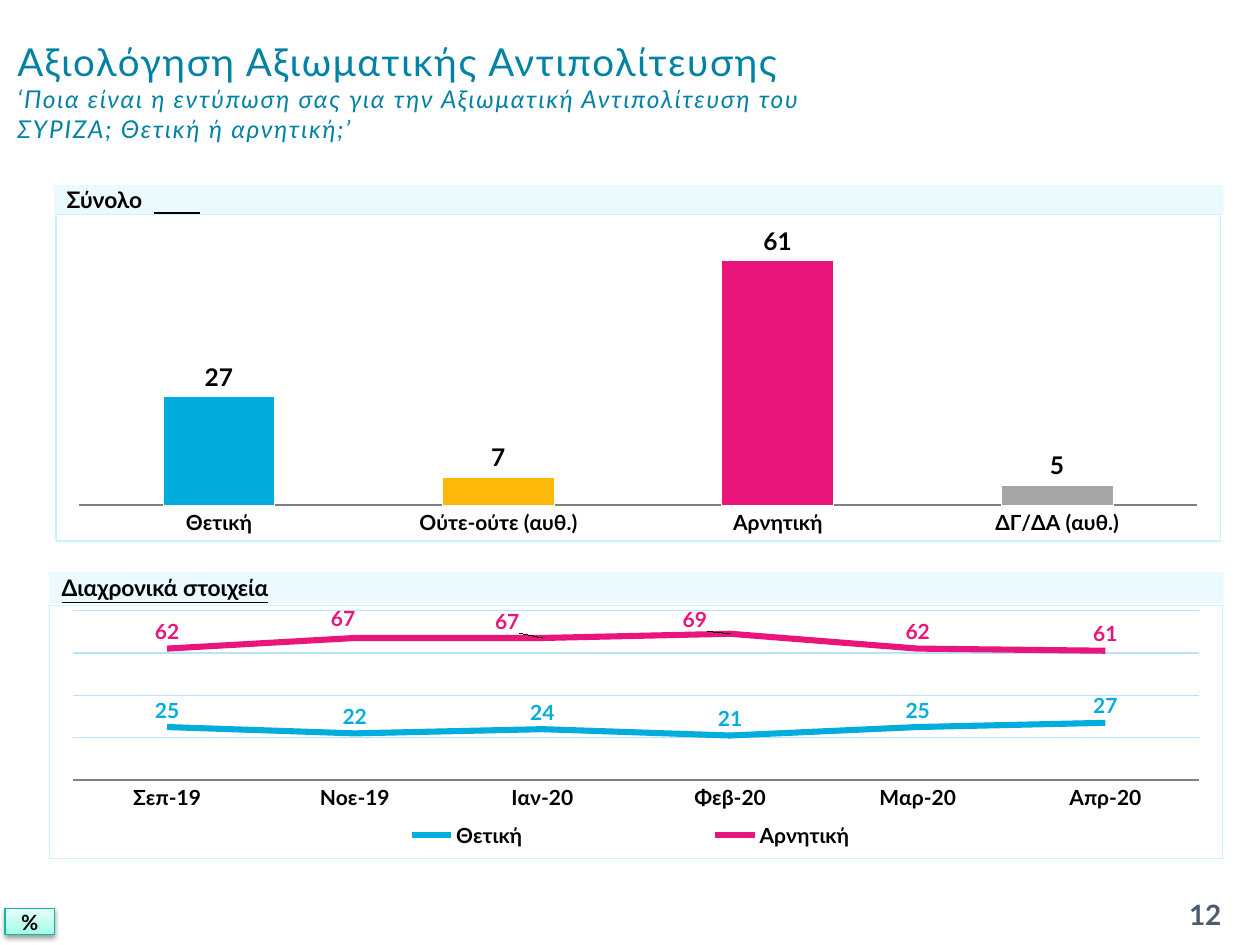
"""Build a slide of opposition ratings with a bar chart and a trend chart."""
from copy import deepcopy

from lxml import etree
from pptx import Presentation, util as u
from pptx.chart.data import CategoryChartData
from pptx.dml.color import RGBColor
from pptx.enum import chart as ch, shapes, text
from pptx.oxml import parse_xml
from pptx.oxml.ns import qn

THEME = {
    "font": "Lato", "title": "0082A5", "ink": "000000", "page": "4E5B6F", "white": "FFFFFF",
    "pale": "C5F3FF", "grid": "B9E2FD", "axis": "808080", "teal": "16B39E",
    "blue": "00ADDC", "amber": "FEB80A", "pink": "EA157A", "grey": "A6A6A6",
    "stops": ("9DFDE8", "BBFCED", "E4FFF9"),
    "sz_title": 22, "sz_page": 16, "sz_sub": 14, "sz_bar": 13, "sz_small": 12,
}
NS = ('xmlns:a="http://schemas.openxmlformats.org/drawingml/2006/main" '
      'xmlns:c="http://schemas.openxmlformats.org/drawingml/2006/chart"')
rgb = {k: RGBColor.from_string(v) for k, v in THEME.items() if isinstance(v, str) and k != "font"}


def style(font, size, color, **fmt):
    font.color.rgb = rgb[color]
    for name, value in {"name": THEME["font"], "size": u.Pt(THEME[size]), **fmt}.items():
        setattr(font, name, value)


def layout(x, y, w=None, h=None, inner=False):
    parts = [("xMode", "edge"), ("yMode", "edge")] if w else []
    parts = ([("layoutTarget", "inner")] if inner else []) + parts + [("x", x), ("y", y)]
    parts += [("w", w), ("h", h)] if w else []
    body = "".join(f'<c:{k} val="{v}"/>' for k, v in parts)
    return parse_xml(f"<c:layout {NS}><c:manualLayout>{body}</c:manualLayout></c:layout>")


prs = Presentation()
prs.slide_width, prs.slide_height = u.Inches(10), u.Inches(7.5)
s = prs.slides.add_slide(prs.slide_layouts[6])

tb = s.shapes.add_textbox(u.Inches(0.04), u.Inches(0.13), u.Inches(6.85), u.Inches(1.18))
tf = tb.text_frame
tf.word_wrap, tf.vertical_anchor = True, text.MSO_ANCHOR.MIDDLE
p = tf.paragraphs[0]
for i, (words, size) in enumerate([
        ("Αξιολόγηση Αξιωματικής Αντιπολίτευσης", "sz_title"),
        ("‘Ποια είναι η εντύπωση σας για την Αξιωματική Αντιπολίτευση του ΣΥΡΙΖΑ; Θετική ή αρνητική;’",
         "sz_sub")]):
    if i:
        p.add_line_break()
    r = p.add_run()
    r.text = words
    style(r.font, size, "title", italic=bool(i))
    r.font._element.set("spc", "100")

boxes = [
    ("Σύνολο", (0.43, 1.47, 9.28, 0.23), "pale", "sz_bar", "ink", True),
    ("Διαχρονικά στοιχεία", (0.39, 4.54, 9.32, 0.25), "pale", "sz_bar", "ink", True),
    ("%", (0.04, 7.21, 0.39, 0.21), "stops", "sz_small", "ink", False),
    ("12", (9.17, 7.06, 0.79, 0.4), None, "sz_page", "page", False),
]
for words, at, fill, size, color, heading in boxes:
    box = [u.Inches(v) for v in at]
    sp = s.shapes.add_shape(shapes.MSO_SHAPE.RECTANGLE, *box) if fill else s.shapes.add_textbox(*box)
    tf = sp.text_frame
    tf.word_wrap, tf.vertical_anchor = True, text.MSO_ANCHOR.MIDDLE
    tf.margin_top = tf.margin_bottom = 0
    p = tf.paragraphs[0]
    p.alignment = text.PP_ALIGN.LEFT if heading else text.PP_ALIGN.CENTER
    r = p.add_run()
    r.text = words
    style(r.font, size, color, bold=True, underline=heading)
    if fill:
        sp.shadow.inherit = False
    if fill == "pale":
        sp.fill.solid()
        sp.fill.fore_color.rgb = rgb["pale"]
        clr = sp._element.spPr.find(".//" + qn("a:srgbClr"))
        etree.SubElement(clr, qn("a:alpha")).set("val", "35000")
        sp.line.fill.background()
    elif fill == "stops":
        sp.fill.gradient()
        sp.fill.gradient_angle = 90
        stops = sp._element.spPr.find(".//" + qn("a:gsLst"))
        stops.insert(1, deepcopy(stops[0]))
        for stop, hue, pos in zip(sp.fill.gradient_stops, THEME["stops"], (0, 0.35, 1)):
            stop.color.rgb, stop.position = RGBColor.from_string(hue), pos
        sp.line.color.rgb, sp.line.width = rgb["teal"], u.Pt(0.75)
        sp._element.spPr.find(qn("a:effectLst")).append(parse_xml(
            f'<a:outerShdw {NS} blurRad="39370" dist="20320" dir="5400000" rotWithShape="0">'
            '<a:srgbClr val="000000"><a:alpha val="38000"/></a:srgbClr></a:outerShdw>'))

rule = s.shapes.add_connector(shapes.MSO_CONNECTOR.STRAIGHT, u.Inches(1.22), u.Inches(1.69),
                              u.Inches(1.59), u.Inches(1.69))
rule.line.color.rgb, rule.line.width = rgb["ink"], u.Pt(0.75)
etree.SubElement(rule._element.spPr, qn("a:effectLst"))

charts = [
    (ch.XL_CHART_TYPE.COLUMN_CLUSTERED, (0.44, 1.7, 9.25, 2.6), 70, (0.02, 0.03, 0.96, 0.86),
     ["Θετική", "Ούτε-ούτε (αυθ.)", "Αρνητική", "ΔΓ/ΔΑ (αυθ.)"],
     [("Σύνολο", [27, 7, 61, 5])]),
    (ch.XL_CHART_TYPE.LINE, (0.39, 4.8, 9.32, 2.02), 80, (0.02, 0.02, 0.96, 0.67),
     ["Σεπ-19", "Νοε-19", "Ιαν-20", "Φεβ-20", "Μαρ-20", "Απρ-20"],
     [("Θετική", [25, 22, 24, 21, 25, 27]), ("Αρνητική", [62, 67, 67, 69, 62, 61])]),
]
for kind, at, top, plot_at, cats, rows in charts:
    data = CategoryChartData(number_format="0")
    data.categories = cats
    for name, vals in rows:
        data.add_series(name, vals)
    chart = s.shapes.add_chart(kind, *[u.Inches(v) for v in at], data).chart
    is_line = kind == ch.XL_CHART_TYPE.LINE
    chart.has_title = False
    style(chart.font, "sz_small", "ink", bold=True)
    chart._chartSpace.chart.addnext(parse_xml(
        f'<c:spPr {NS}><a:solidFill><a:srgbClr val="{THEME["white"]}"/></a:solidFill><a:ln w="9525">'
        f'<a:solidFill><a:srgbClr val="{THEME["pale"]}"/></a:solidFill></a:ln></c:spPr>'))
    area = chart._chartSpace.chart.plotArea
    for old in area.findall(qn("c:layout")):
        area.remove(old)
    area.insert(0, layout(*plot_at, inner=True))
    cat, val = chart.category_axis, chart.value_axis
    cat.major_tick_mark = ch.XL_TICK_MARK.NONE
    cat.format.line.color.rgb = rgb["axis"]
    style(cat.tick_labels.font, "sz_small", "ink", bold=True)
    val.minimum_scale, val.maximum_scale, val.major_unit = 0, top, top / 4
    val.has_major_gridlines, val.visible = is_line, False
    chart.has_legend = is_line
    plot = chart.plots[0]
    plot.vary_by_categories = False
    if is_line:
        grid = val.major_gridlines.format.line
        grid.color.rgb, grid.width = rgb["grid"], u.Pt(0.75)
        legend = chart.legend
        legend.position, legend.include_in_layout = ch.XL_LEGEND_POSITION.BOTTOM, False
        style(legend.font, "sz_small", "ink", bold=True)
        for old in legend._element.findall(qn("c:layout")):
            legend._element.remove(old)
        legend._element.find(qn("c:legendPos")).addnext(layout(0.15, 0.85, 0.69, 0.11))
    else:
        plot.gap_width, plot.overlap = 150, -25
    for ser, hue in zip(plot.series, ("blue", "pink")):
        labels = ser.data_labels
        labels.show_value = True
        labels.number_format, labels.number_format_is_linked = "0", False
        labels.position = ch.XL_LABEL_POSITION.ABOVE if is_line else ch.XL_LABEL_POSITION.OUTSIDE_END
        style(labels.font, "sz_small" if is_line else "sz_sub", hue if is_line else "ink", bold=True)
        if is_line:
            ser.smooth = False
            ser.marker.style = ch.XL_MARKER_STYLE.NONE
            ser.format.line.color.rgb, ser.format.line.width = rgb[hue], u.Pt(3.5)
            continue
        for i, point_hue in enumerate(("blue", "amber", "pink", "grey")):
            fmt = ser.points[i].format
            fmt.fill.solid()
            fmt.fill.fore_color.rgb = rgb[point_hue]
            fmt.line.color.rgb = rgb["white"]

negative = chart.plots[0].series[1]
for i, dx, dy in [(1, -0.01, -0.01), (2, -0.03, 0), (3, -0.03, 0.01)]:
    label = negative.points[i].data_label
    style(label.font, "sz_small", "pink", bold=True)
    label.position = ch.XL_LABEL_POSITION.ABOVE
for label, (dx, dy) in zip(negative._element.xpath(".//c:dLbl"), [(-0.01, -0.01), (-0.03, 0), (-0.03, 0.01)]):
    label.insert(1, layout(dx, dy))

prs.save("out.pptx")
